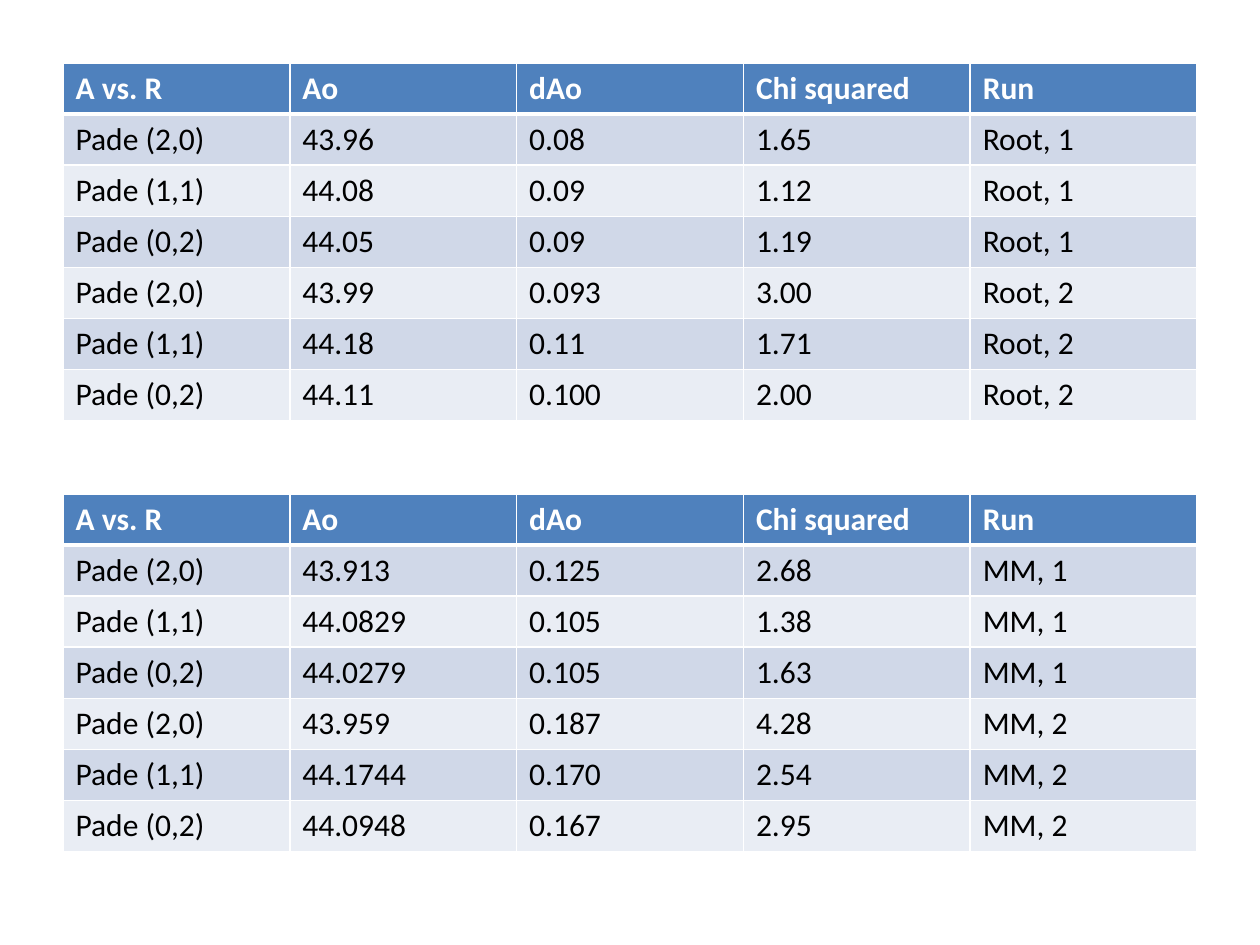
"""Build a slide with two tables of Pade fit results."""
from dataclasses import dataclass

from lxml import etree
from pptx import Presentation, util as u
from pptx.dml.color import RGBColor
from pptx.enum import text
from pptx.oxml import ns

WIDTH, HEIGHT = u.Inches(10), u.Inches(7.5)
WHITE = RGBColor(0xFF, 0xFF, 0xFF)
BLACK = RGBColor(0x00, 0x00, 0x00)
HEADER = RGBColor(0x4F, 0x81, 0xBD)
BANDS = (RGBColor(0xD0, 0xD8, 0xE8), RGBColor(0xE9, 0xED, 0xF4))
FONT = "Calibri"
MARGIN = 0.05
TABLE_SHARE = 2.84 / 7.5
COLUMNS = ("A vs. R", "Ao", "dAo", "Chi squared", "Run")
FITS = ("Pade (2,0)", "Pade (1,1)", "Pade (0,2)")


@dataclass(frozen=True)
class Results:
    """Fit results of one analysis, with its top as a share of the slide."""

    top: float
    analysis: str
    values: tuple[tuple[str, str, str], ...]

    def rows(self) -> list[tuple[str, ...]]:
        """Return the header and the body rows, three fits to each run."""
        body = [
            (FITS[index % len(FITS)], *values,
             f"{self.analysis}, {index // len(FITS) + 1}")
            for index, values in enumerate(self.values)
        ]
        return [COLUMNS, *body]


RESULTS = (
    Results(0.5 / 7.5, "Root", (
        ("43.96", "0.08", "1.65"),
        ("44.08", "0.09", "1.12"),
        ("44.05", "0.09", "1.19"),
        ("43.99", "0.093", "3.00"),
        ("44.18", "0.11", "1.71"),
        ("44.11", "0.100", "2.00"),
    )),
    Results(3.92 / 7.5, "MM", (
        ("43.913", "0.125", "2.68"),
        ("44.0829", "0.105", "1.38"),
        ("44.0279", "0.105", "1.63"),
        ("43.959", "0.187", "4.28"),
        ("44.1744", "0.170", "2.54"),
        ("44.0948", "0.167", "2.95"),
    )),
)


def write(cell, words: str, *, color: RGBColor, bold: bool = False,
          size: int = 18) -> None:
    """Write formatted text into a cell."""
    para = cell.text_frame.paragraphs[0]
    para.alignment = text.PP_ALIGN.LEFT
    span = para.add_run()
    span.text = words
    span.font.name = FONT
    span.font.size = u.Pt(size)
    span.font.bold = bold
    span.font.color.rgb = color


def set_borders(cell, *, top: int = 1, bottom: int = 1) -> None:
    """Draw white borders, with widths in points, round a cell."""
    properties = cell._tc.get_or_add_tcPr()
    for side, width in (("L", 1), ("R", 1), ("T", top), ("B", bottom)):
        line = etree.SubElement(properties, ns.qn(f"a:ln{side}"),
                                w=str(u.Pt(width)))
        fill = etree.SubElement(line, ns.qn("a:solidFill"))
        etree.SubElement(fill, ns.qn("a:srgbClr"), val=str(WHITE))


def add_results(page, results: Results) -> None:
    """Draw one results table with a header and banded rows."""
    rows = results.rows()
    table = page.shapes.add_table(
        len(rows), len(COLUMNS),
        round(MARGIN * WIDTH), round(results.top * HEIGHT),
        round((1 - 2 * MARGIN) * WIDTH), round(TABLE_SHARE * HEIGHT),
    ).table
    for row, values in enumerate(rows):
        is_header = row == 0
        for column, words in enumerate(values):
            cell = table.cell(row, column)
            set_borders(cell, top=3 if row == 1 else 1,
                        bottom=3 if is_header else 1)
            cell.fill.solid()
            cell.fill.fore_color.rgb = (
                HEADER if is_header else BANDS[(row - 1) % 2])
            write(cell, words, color=WHITE if is_header else BLACK,
                  bold=is_header)


def main() -> None:
    """Build and save the deck."""
    deck = Presentation()
    deck.slide_width, deck.slide_height = WIDTH, HEIGHT
    page = deck.slides.add_slide(deck.slide_layouts[6])
    for results in RESULTS:
        add_results(page, results)
    deck.save("out.pptx")


if __name__ == "__main__":
    main()
